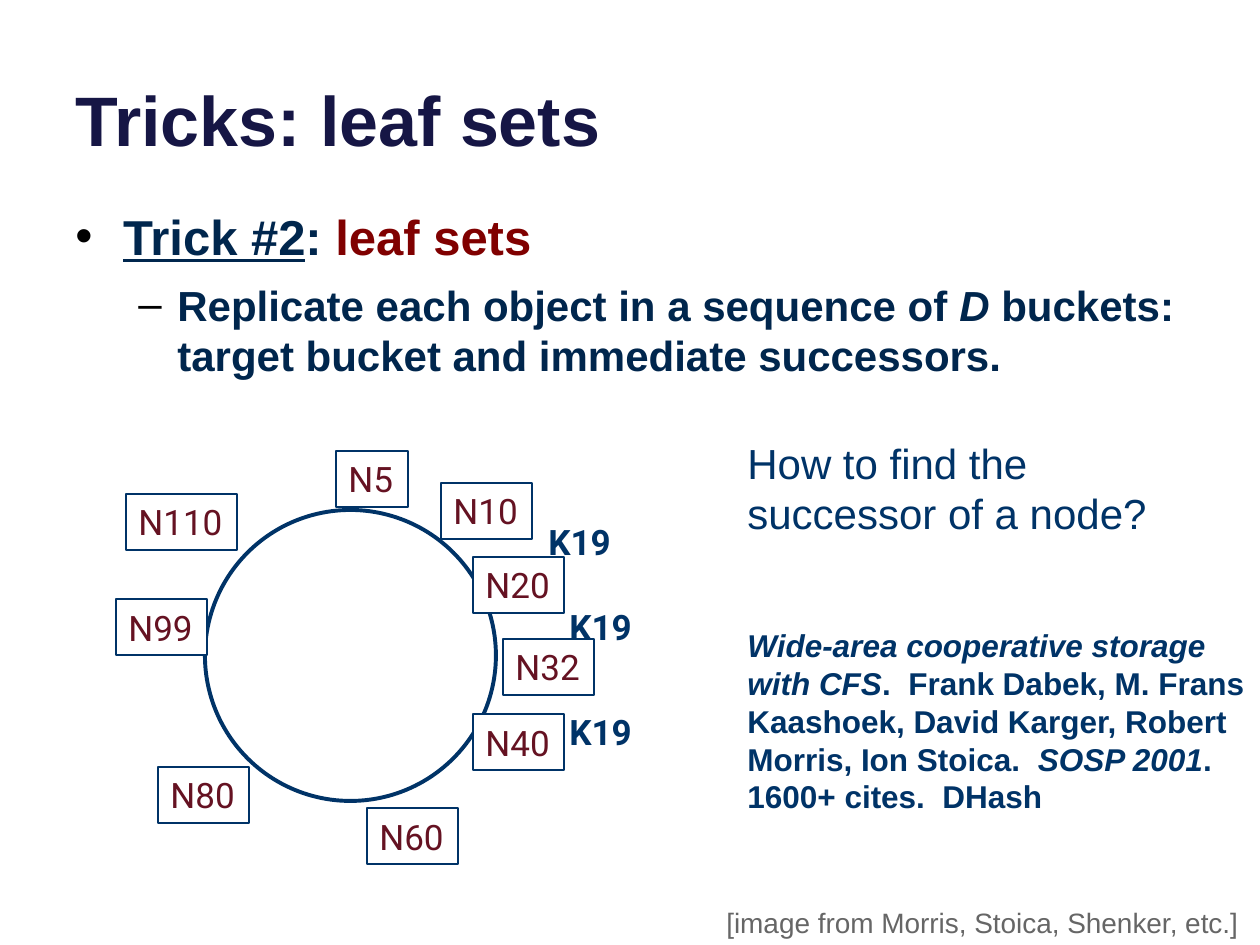
import pptx
import pptx.dml.color
import pptx.enum.shapes
import pptx.enum.text
import pptx.util
from lxml import etree

PX = 914400 // 126
NAVY, BLUE, MAROON, WINE = "00264D", "003367", "800000", "651222"

TITLE = [[("Tricks: leaf sets", "b")]]
TRICK = [("Trick #2", "bu", NAVY), (": ", "b", NAVY), ("leaf sets", "b", MAROON)]
REPLICATE = [
    ("Replicate each object in a sequence of ", "b"),
    ("D ", "bi"),
    ("buckets: target bucket and immediate successors.", "b"),
]
BULLETS = [("•", 28, 9, 0.38, 0.38), ("–", 24, 8, 0.81, 0.31)]
QUESTION = [[("How to find the successor of a node?", "")]]
CITATION = [
    [
        ("Wide-area cooperative storage with CFS", "bi"),
        (".  Frank Dabek, M. Frans Kaashoek, David Karger, Robert Morris, Ion Stoica.  ", "b"),
        ("SOSP 2001", "bi"),
        (".", "b"),
    ],
    [("1600+ cites.  DHash", "b")],
]
CREDIT = [[("[image from Morris, Stoica, Shenker, etc.]", "")]]

RING = (205, 510, 291, 291)
NODES = [
    ("N32", 503, 639, False), ("N10", 441, 483, False), ("N5", 336, 451, False),
    ("N110", 126, 494, False), ("N99", 116, 599, True), ("N80", 158, 767, False),
    ("N60", 367, 808, False), ("N20", 473, 557, True), ("N40", 473, 714, True),
]
KEYS = [(557, 599), (536, 514), (557, 704)]


def color(value):
    return pptx.dml.color.RGBColor.from_string(value)


def write(frame, paragraphs, size, ink, font="Arial", wrap=True):
    frame.word_wrap = wrap
    for index, spans in enumerate(paragraphs):
        para = frame.add_paragraph() if index else frame.paragraphs[0]
        para.alignment = pptx.enum.text.PP_ALIGN.LEFT
        for text, style, *own in spans:
            span = para.add_run()
            span.text = text
            span.font.name = font
            span.font.size = pptx.util.Pt(size)
            span.font.bold = "b" in style
            span.font.italic = "i" in style
            span.font.underline = "u" in style
            span.font.color.rgb = color(own[0] if own else ink)


def add_text(page, place, paragraphs, size, ink, **options):
    box = page.shapes.add_textbox(*(n * PX for n in place))
    write(box.text_frame, paragraphs, size, ink, **options)
    return box.text_frame


def add_outline(page, kind, place, width, filled=False):
    shape = page.shapes.add_shape(kind, *(n * PX for n in place))
    shape.shadow.inherit = False
    if filled:
        shape.fill.solid()
        shape.fill.fore_color.rgb = color("FFFFFF")
    else:
        shape.fill.background()
    shape.line.color.rgb = color(BLUE)
    shape.line.width = pptx.util.Pt(width)
    return shape


def add_bullet(para, mark, size, before, margin, hang):
    para.space_before = pptx.util.Pt(before)
    for span in para.runs:
        span.font.size = pptx.util.Pt(size)
    props = para._p.get_or_add_pPr()
    props.set("marL", str(pptx.util.Inches(margin)))
    props.set("indent", str(-pptx.util.Inches(hang)))
    tag = pptx.oxml.ns.qn
    tint = etree.SubElement(props, tag("a:buClr"))
    etree.SubElement(tint, tag("a:srgbClr"), val="000000")
    etree.SubElement(props, tag("a:buFont"), typeface="Arial")
    etree.SubElement(props, tag("a:buChar"), char=mark)


def main():
    deck = pptx.Presentation()
    deck.slide_width = pptx.util.Inches(10)
    deck.slide_height = pptx.util.Inches(7.5)
    page = deck.slides.add_slide(deck.slide_layouts[6])
    shapes = pptx.enum.shapes.MSO_SHAPE

    title = add_text(page, (63, -47, 1134, 214), TITLE, 40, "161645")
    title.vertical_anchor = pptx.enum.text.MSO_ANCHOR.BOTTOM
    body = add_text(page, (63, 200, 1134, 567), [TRICK, REPLICATE], 24, NAVY)
    for para, bullet in zip(body.paragraphs, BULLETS):
        add_bullet(para, *bullet)
    body.paragraphs[1].level = 1

    add_outline(page, shapes.OVAL, RING, 2.25)
    for name, left, top, filled in NODES:
        width = 72 + (len(name) - 2) * 39 // 2
        node = add_outline(page, shapes.RECTANGLE, (left, top, width, 56), 0.75, filled)
        write(node.text_frame, [[(name, "")]], 20, WINE, font="Roboto", wrap=False)
    for left, top in KEYS:
        add_text(page, (left, top, 126, 54), [[("K19", "b")]], 20, BLUE, font="Roboto")

    add_text(page, (714, 899, 544, 46), CREDIT, 16, "666666", wrap=False)
    add_text(page, (735, 431, 441, 114), QUESTION, 24, BLUE)
    add_text(page, (735, 620, 525, 204), CITATION, 18, BLUE)
    deck.save("out.pptx")


if __name__ == "__main__":
    main()
